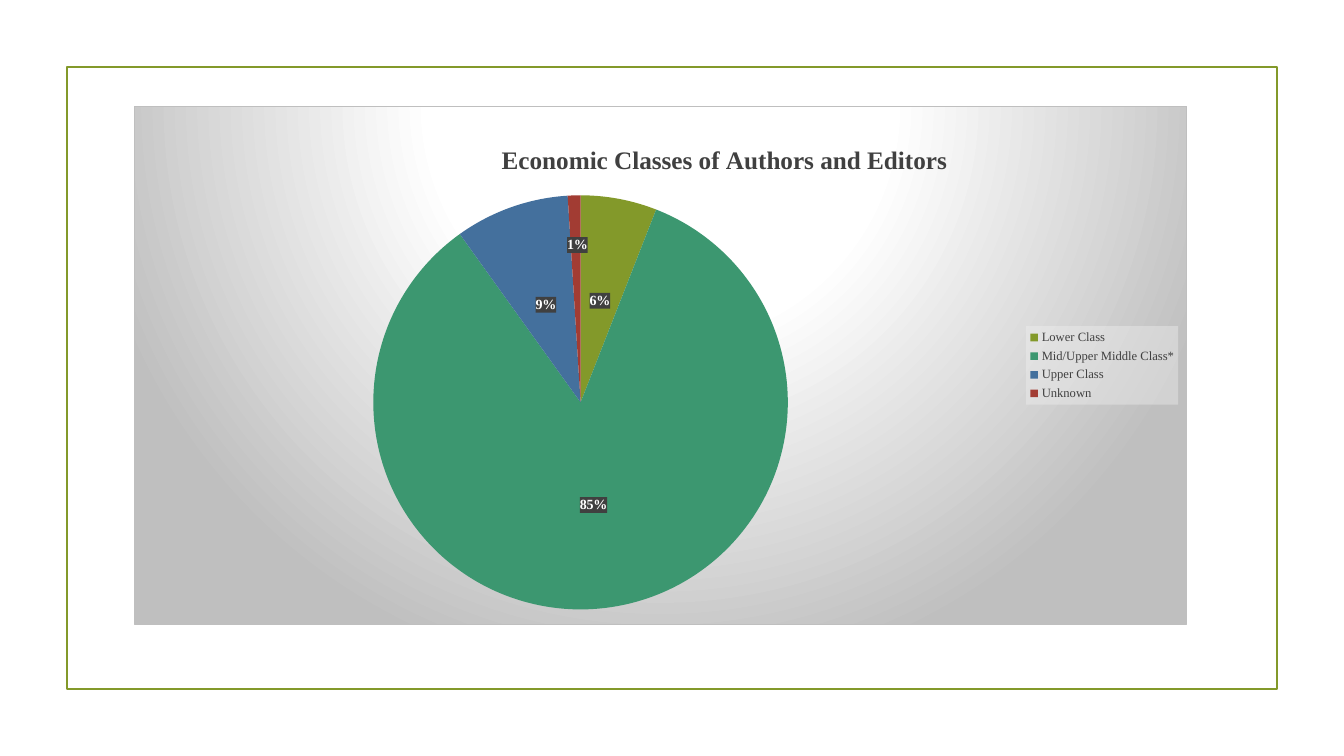
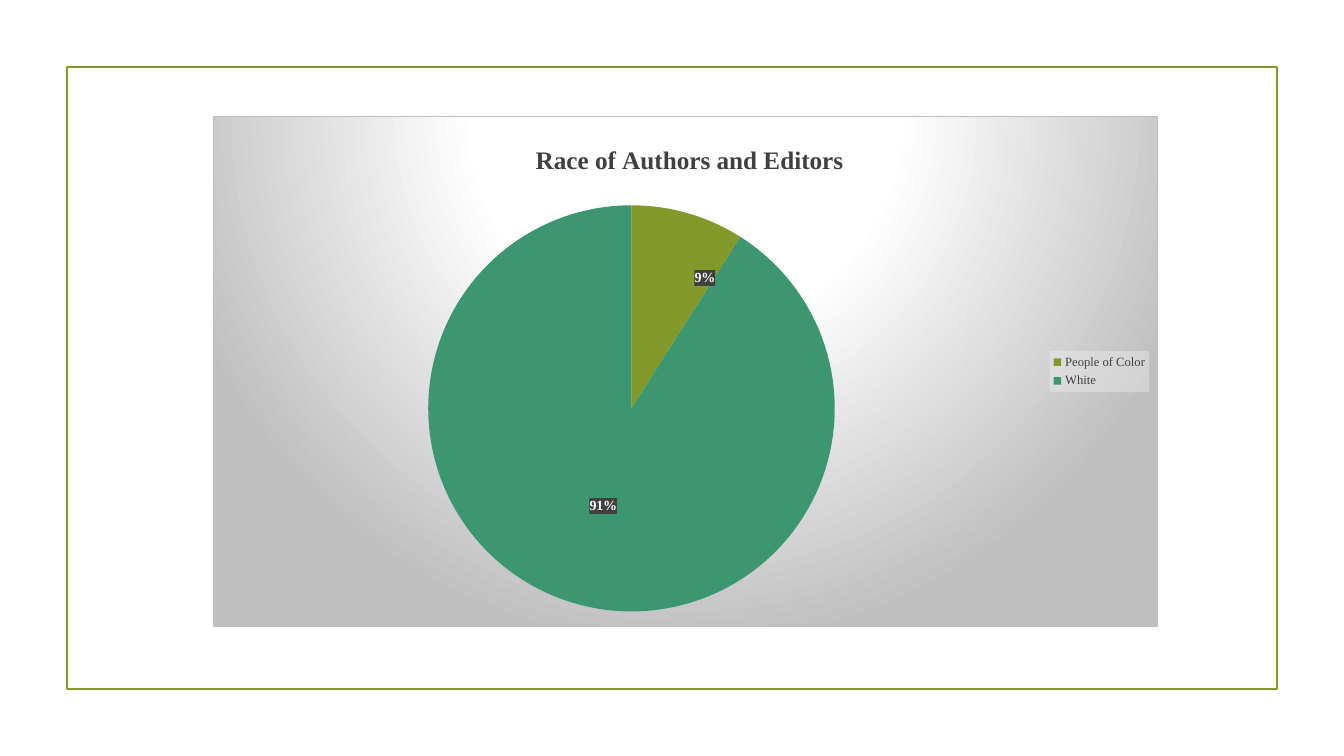
import pptx
import pptx.util
import pptx.chart.data
import pptx.dml.color
import pptx.enum.chart
import pptx.enum.shapes
import pptx.oxml
import pptx.oxml.ns

# Content: box is left, top, width, height; title is left, top; pie is left, top, size
SLIDES = [
    dict(
        title="Economic Classes of Authors and Editors",
        data=[("Lower Class", 6), ("Mid/Upper Middle Class*", 85),
              ("Upper Class", 9), ("Unknown", 1)],
        box=(134, 106, 1053, 519), head=(497, 139), pie=(373, 195, 415),
        moved={3: (0, -54)},
    ),
    dict(
        title="Race of Authors and Editors",
        data=[("People of Color", 9), ("White", 91)],
        box=(213, 116, 945, 511), head=(531, 139), pie=(428, 205, 407),
        moved={0: (45, -33)},
    ),
]

# Shared look
SIZE = (1344, 756)
FRAME = (67, 67, 1210, 622)
COLORS = ["83992A", "3C9770", "44709D", "A23C33"]
FACE = "Times New Roman"
PERCENT = '0"%"'
BASE = dict(name=FACE, size=10, color="000000")
HEAD = dict(name=FACE, size=18, bold=True, color="404040")
LABEL = dict(name=FACE, size=10, bold=True, color="FFFFFF")
LEGEND = dict(name=FACE, size=9, bold=False, color="404040")

SPACES = pptx.oxml.ns.nsdecls("c", "a")
BACK = """<a:gradFill><a:gsLst>
  <a:gs pos="0"><a:srgbClr val="FFFFFF"/></a:gs>
  <a:gs pos="39000"><a:srgbClr val="FFFFFF"/></a:gs>
  <a:gs pos="100000"><a:srgbClr val="BFBFBF"/></a:gs></a:gsLst>
  <a:path path="circle">
  <a:fillToRect l="50000" t="-80000" r="50000" b="180000"/></a:path></a:gradFill>
  <a:ln w="9525"><a:solidFill><a:srgbClr val="BFBFBF"/></a:solidFill></a:ln>"""


def px(n):
    return pptx.util.Emu(round(n * 914400 / 100.8))


def rgb(code):
    return pptx.dml.color.RGBColor.from_string(code)


def style(font, look):
    for key, val in look.items():
        if key == "color":
            font.color.rgb = rgb(val)
        else:
            setattr(font, key, pptx.util.Pt(val) if key == "size" else val)


def node(tag, body="", attrs=""):
    return pptx.oxml.parse_xml(f"<c:{tag} {SPACES} {attrs}>{body}</c:{tag}>")


def clear(color, alpha):
    """Fill that lets part of the background through."""
    return node("spPr", f'<a:solidFill><a:srgbClr val="{color}">'
                f'<a:alpha val="{alpha}000"/></a:srgbClr></a:solidFill>'
                "<a:ln><a:noFill/></a:ln>")


def place(modes, **parts):
    """Manual layout, in fractions of the chart."""
    body = "".join(f'<c:{m} val="{v}"/>' for m, v in modes.items())
    body += "".join(f'<c:{k} val="{v:.4f}"/>' for k, v in parts.items())
    return node("layout", f"<c:manualLayout>{body}</c:manualLayout>")


def drop(parent):
    for old in parent.xpath("./c:layout"):
        parent.remove(old)


def frame(slide):
    rect = slide.shapes.add_shape(
        pptx.enum.shapes.MSO_SHAPE.RECTANGLE, *map(px, FRAME))
    rect.shadow.inherit = False
    rect.fill.background()
    rect.line.color.rgb = rgb(COLORS[0])
    rect.line.width = pptx.util.Pt(1.25)


def labels(series, moved, wide, high):
    every = series.data_labels
    every.show_value = True
    every.number_format = PERCENT
    every.number_format_is_linked = False
    every.position = pptx.enum.chart.XL_LABEL_POSITION.CENTER
    style(every.font, LABEL)
    for i in moved:
        label = series.points[i].data_label
        style(label.font, LABEL)
        label.position = pptx.enum.chart.XL_LABEL_POSITION.CENTER
    for text in series._element.xpath("./c:dLbls//c:txPr"):
        text.addprevious(clear("404040", 75))
    for one in series._element.xpath(".//c:dLbl"):
        index = one.xpath("./c:idx")[0]
        dx, dy = moved[int(index.get("val"))]
        index.addnext(place({}, x=dx / wide, y=dy / high))
        one.xpath("./c:spPr")[0].addprevious(
            node("numFmt", attrs=f"formatCode='{PERCENT}' sourceLinked='0'"))


def pie(slide, item):
    left, top, wide, high = item["box"]
    names, vals = zip(*item["data"])
    data = pptx.chart.data.CategoryChartData()
    data.categories = names
    data.add_series("Series 1", vals)
    chart = slide.shapes.add_chart(
        pptx.enum.chart.XL_CHART_TYPE.PIE, *map(px, item["box"]), data).chart
    style(chart.font, BASE)

    # Background
    space = chart._chartSpace
    space.xpath("./c:txPr")[0].addprevious(node("spPr", BACK))
    space.xpath("./c:chart")[0].addprevious(
        node("roundedCorners", attrs='val="0"'))

    # Title
    chart.has_title = True
    words = chart.chart_title.text_frame
    words.text = item["title"]
    style(words.paragraphs[0].runs[0].font, HEAD)
    title = space.xpath("./c:chart/c:title")[0]
    drop(title)
    x, y = item["head"]
    edge = dict(xMode="edge", yMode="edge")
    title.xpath("./c:tx")[0].addnext(
        place(edge, x=(x - left) / wide, y=(y - top) / high))

    # Plot and slices
    area = space.xpath("./c:chart/c:plotArea")[0]
    drop(area)
    x, y, size = item["pie"]
    area.insert(0, place(dict(layoutTarget="inner", **edge),
                         x=(x - left) / wide, y=(y - top) / high,
                         w=size / wide, h=size / high))
    series = chart.plots[0].series[0]
    for i in range(len(vals)):
        part = series.points[i].format
        part.fill.solid()
        part.fill.fore_color.rgb = rgb(COLORS[i])
        part.line.fill.background()
    labels(series, item["moved"], wide, high)

    # Legend
    chart.has_legend = True
    key = chart.legend
    key.position = pptx.enum.chart.XL_LEGEND_POSITION.RIGHT
    key.include_in_layout = False
    style(key.font, LEGEND)
    key._element.xpath("./c:txPr")[0].addprevious(clear("F2F2F2", 39))


def main():
    deck = pptx.Presentation()
    deck.slide_width, deck.slide_height = map(px, SIZE)
    for item in SLIDES:
        slide = deck.slides.add_slide(deck.slide_layouts[6])
        frame(slide)
        pie(slide, item)
    deck.save("out.pptx")


if __name__ == "__main__":
    main()
